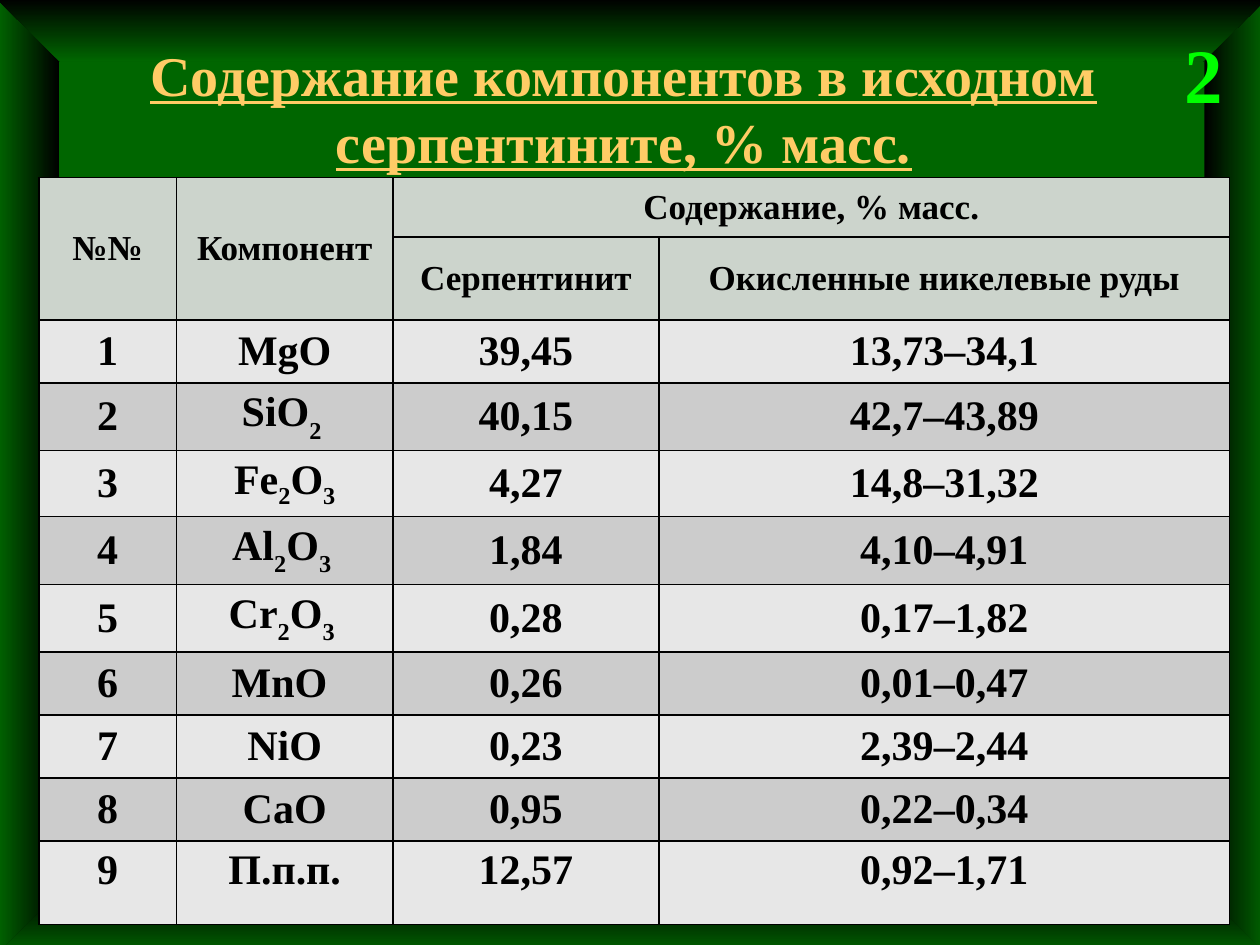
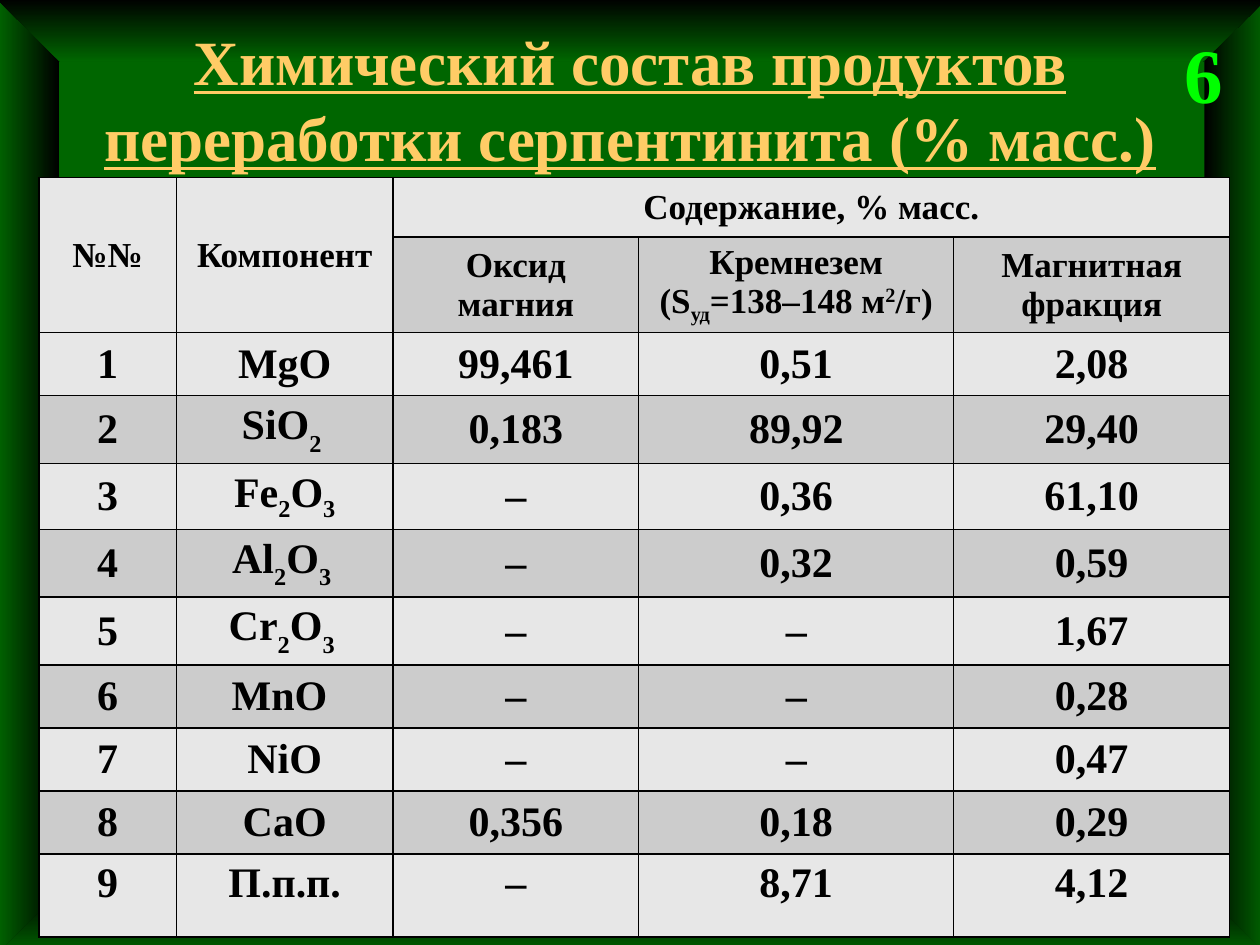
from lxml.etree import SubElement
from pptx import Presentation
from pptx.dml.color import RGBColor
from pptx.enum.shapes import MSO_SHAPE
from pptx.enum.text import MSO_ANCHOR, MSO_AUTO_SIZE, PP_ALIGN
from pptx.oxml.ns import qn
from pptx.util import Pt

FONT = "Times New Roman"
GREEN, BLACK, GOLD, LIME = "006600", "000000", "FFCC66", "00FF00"
LIGHT, DARK, SAGE = "E7E7E7", "CCCCCC", "CCD4CC"

COMPONENTS = [
    "MgO",
    [("SiO", 0), ("2 ", -30)],
    [("Fe", 0), ("2", -25), ("O", 0), ("3", -25)],
    [("Al", 0), ("2", -30), ("O", 0), ("3 ", -30)],
    [("Cr", 0), ("2", -30), ("O", 0), ("3 ", -30)],
    "MnO ",
    "NiO",
    "CaO",
    "П.п.п.",
]
SILICA = ["Кремнезем", [("(S", 0), ("уд", -25), ("=138–148 м", 0), ("2", 30), ("/г)", 0)]]

SLIDES = [
    {
        "number": "2",
        "title": "Содержание компонентов в исходном серпентините, % масс.",
        "title_box": (50.4, 22.3, 612, 78.5),
        "title_size": 32,
        "header_fills": (SAGE, SAGE),
        "products": [["Серпентинит"], ["Окисленные никелевые руды"]],
        "product_widths": [151.9, 326.2],
        "values": [
            ("39,45", "13,73–34,1"),
            ("40,15", "42,7–43,89"),
            ("4,27", "14,8–31,32"),
            ("1,84", "4,10–4,91"),
            ("0,28", "0,17–1,82"),
            ("0,26", "0,01–0,47"),
            ("0,23", "2,39–2,44"),
            ("0,95", "0,22–0,34"),
            ("12,57", "0,92–1,71"),
        ],
    },
    {
        "number": "6",
        "title": "Химический состав продуктов переработки серпентинита (% масс.)",
        "title_box": (22.3, 22.3, 675.4, 67.7),
        "title_size": 36,
        "header_fills": (LIGHT, DARK),
        "products": [["Оксид магния"], SILICA, ["Магнитная фракция"]],
        "product_widths": [140.4, 180, 157.7],
        "values": [
            ("99,461", "0,51", "2,08"),
            ("0,183", "89,92", "29,40"),
            ("–", "0,36", "61,10"),
            ("–", "0,32", "0,59"),
            ("–", "–", "1,67"),
            ("–", "–", "0,28"),
            ("–", "–", "0,47"),
            ("0,356", "0,18", "0,29"),
            ("–", "8,71", "4,12"),
        ],
    },
]

TABLE_LEFT, TABLE_TOP = 22.3, 101.5
LABEL_WIDTHS = [78.5, 123.8]
ROW_HEIGHTS = [33.8, 47.5] + [36] * 8 + [47.5]


def color(value):
    return RGBColor.from_string(value)


def points(*lengths):
    return [Pt(length) for length in lengths]


def write(paragraph, text, size=24, fill=BLACK, underline=None, align=PP_ALIGN.CENTER):
    paragraph.alignment = align
    for part, baseline in [(text, 0)] if isinstance(text, str) else text:
        run = paragraph.add_run()
        run.text = part
        font = run.font
        font.name, font.size, font.bold, font.underline = FONT, Pt(size), True, underline
        font.color.rgb = color(fill)
        if baseline:
            font._element.set("baseline", str(baseline * 1000))


def paint_bevel(shape, stops, angle):
    shape.shadow.inherit = False
    shape.line.fill.background()
    shape.fill.gradient()
    shape.fill.gradient_angle = angle
    for stop, value in zip(shape.fill.gradient_stops, stops):
        stop.color.rgb = color(value)


def add_bevel_frame(slide, master):
    shapes = slide.shapes
    bevels = []
    for left, stops in ((688.3, (BLACK, GREEN)), (-2.2, (GREEN, BLACK))):
        side = shapes.add_shape(MSO_SHAPE.RECTANGLE, *points(left, -0.7, 36, 545.8))
        paint_bevel(side, stops, 0)
        bevels.append(side)
    for outer, inner in ((-0.7, 35.3), (545.8, 509)):
        builder = shapes.build_freeform(*points(-2, outer))
        corners = [(34.5, inner), (687.2, inner), (724, outer)]
        builder.add_line_segments([points(*corner) for corner in corners], close=True)
        edge = builder.convert_to_shape()
        paint_bevel(edge, (BLACK, GREEN), 270)
        bevels.append(edge)
    tree = master.element.cSld.spTree
    for position, bevel in enumerate(bevels, 2):
        tree.insert(position, bevel.element)


def outline(cell):
    properties = cell._tc.get_or_add_tcPr()
    for position, side in enumerate(("a:lnL", "a:lnR", "a:lnT", "a:lnB")):
        line = SubElement(properties, qn(side), w=str(Pt(1)))
        SubElement(SubElement(line, qn("a:solidFill")), qn("a:srgbClr"), val=BLACK)
        properties.insert(position, line)


def add_composition_table(slide, content):
    widths = LABEL_WIDTHS + content["product_widths"]
    frame = slide.shapes.add_table(
        len(ROW_HEIGHTS), len(widths),
        *points(TABLE_LEFT, TABLE_TOP, sum(widths), sum(ROW_HEIGHTS)))
    table = frame.table
    table.first_row = table.horz_banding = False
    for column, width in zip(table.columns, widths):
        column.width = Pt(width)
    for row, height in zip(table.rows, ROW_HEIGHTS):
        row.height = Pt(height)

    table.cell(0, 0).merge(table.cell(1, 0))
    table.cell(0, 1).merge(table.cell(1, 1))
    table.cell(0, 2).merge(table.cell(0, len(widths) - 1))
    rows = [[["№№"], ["Компонент"], ["Содержание, % масс."]], [[], [], *content["products"]]]
    for number, (component, values) in enumerate(zip(COMPONENTS, content["values"]), 1):
        rows.append([[str(number)], [component], *([value] for value in values)])

    last = len(rows) - 1
    for row_index, row in enumerate(rows):
        header = row_index < 2
        fill = content["header_fills"][row_index] if header else (LIGHT, DARK)[row_index % 2]
        for column_index in range(len(widths)):
            cell = table.cell(row_index, column_index)
            cell.fill.solid()
            cell.fill.fore_color.rgb = color(fill)
            cell.vertical_anchor = MSO_ANCHOR.TOP if row_index == last else MSO_ANCHOR.MIDDLE
            outline(cell)
            lines = row[column_index] if column_index < len(row) else []
            for line_index, text in enumerate(lines):
                text_frame = cell.text_frame
                paragraph = text_frame.add_paragraph() if line_index else text_frame.paragraphs[0]
                write(paragraph, text, size=20 if header else 24)


def add_title(slide, content):
    title = slide.shapes.title
    title.left, title.top, title.width, title.height = points(*content["title_box"])
    title.text_frame.auto_size = MSO_AUTO_SIZE.NONE
    title.text_frame.vertical_anchor = MSO_ANCHOR.MIDDLE
    write(title.text_frame.paragraphs[0], content["title"],
          size=content["title_size"], fill=GOLD, underline=True)


def add_number(slide, number):
    box = slide.shapes.add_textbox(*points(669.6, 11.5, 36.7, 60.5))
    box.text_frame.word_wrap = False
    box.text_frame.auto_size = MSO_AUTO_SIZE.SHAPE_TO_FIT_TEXT
    write(box.text_frame.paragraphs[0], number, size=44, fill=LIME, align=PP_ALIGN.LEFT)


def main():
    presentation = Presentation()
    presentation.slide_width, presentation.slide_height = points(720, 540)
    master = presentation.slide_master
    master.background.fill.solid()
    master.background.fill.fore_color.rgb = color(GREEN)
    for content in SLIDES:
        slide = presentation.slides.add_slide(presentation.slide_layouts[5])
        if content is SLIDES[0]:
            add_bevel_frame(slide, master)
        add_title(slide, content)
        add_composition_table(slide, content)
        add_number(slide, content["number"])
    presentation.save("out.pptx")


if __name__ == "__main__":
    main()
